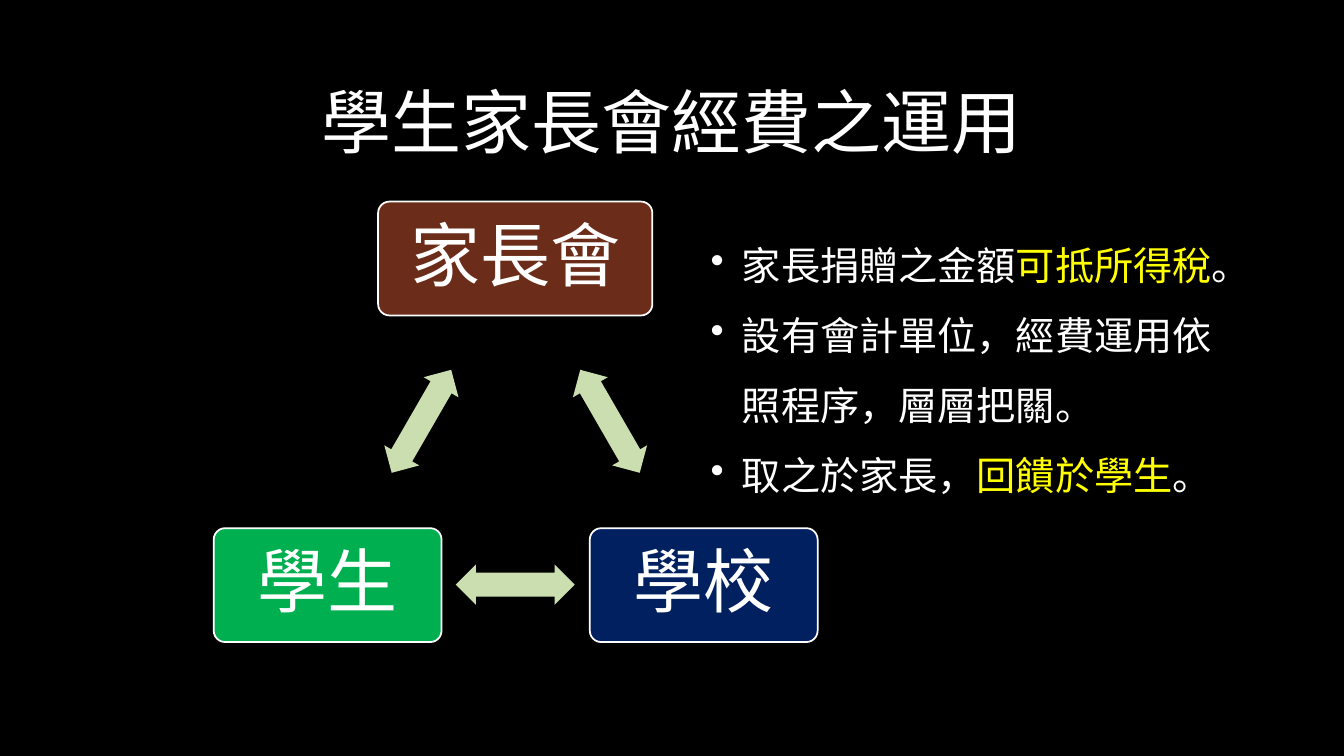
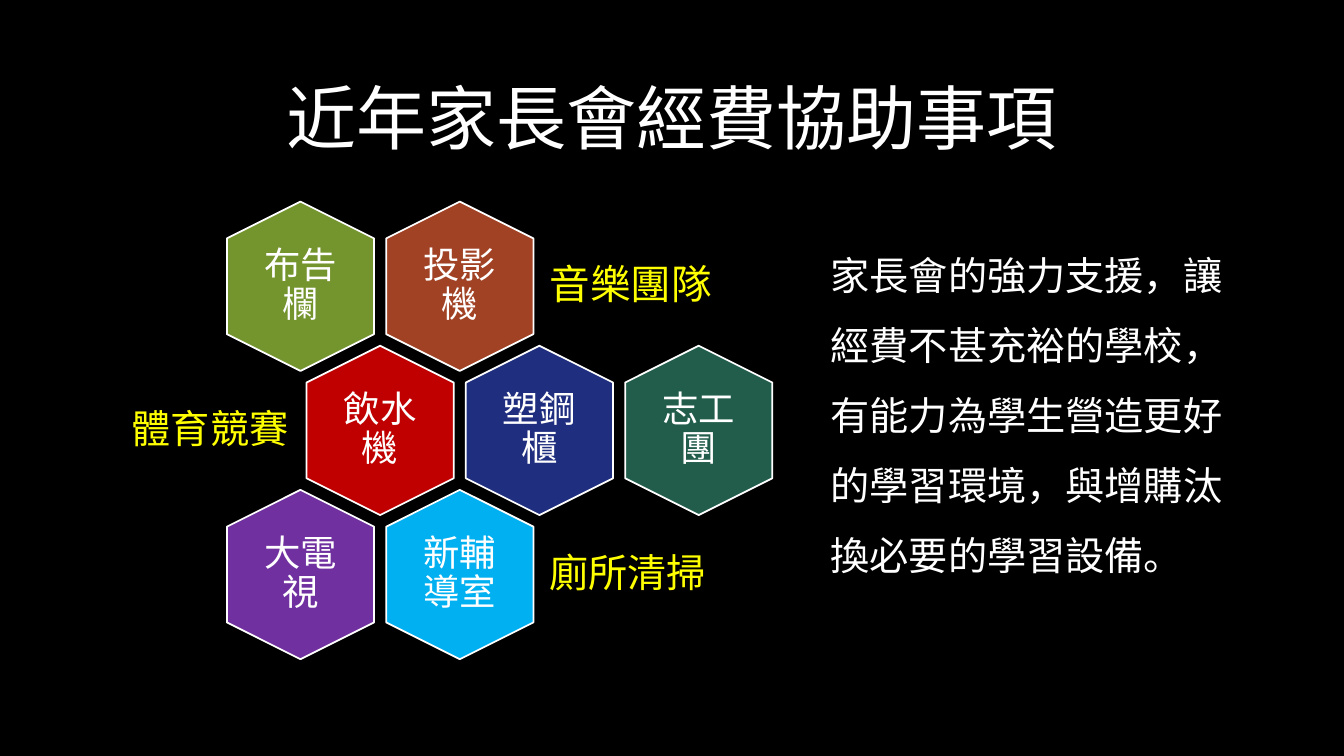
import lxml.etree
import pptx
import pptx.dml.color
import pptx.enum.shapes
import pptx.enum.text
import pptx.oxml.ns
import pptx.util

Inches = pptx.util.Inches
Pt = pptx.util.Pt
RGBColor = pptx.dml.color.RGBColor
MSO_SHAPE = pptx.enum.shapes.MSO_SHAPE
PP_ALIGN = pptx.enum.text.PP_ALIGN
MIDDLE = pptx.enum.text.MSO_ANCHOR.MIDDLE
qn = pptx.oxml.ns.qn

BLACK = RGBColor(0x00, 0x00, 0x00)
WHITE = RGBColor(0xFF, 0xFF, 0xFF)
YELLOW = RGBColor(0xFF, 0xFF, 0x00)
BROWN = RGBColor(0x6B, 0x2C, 0x19)
NAVY = RGBColor(0x00, 0x20, 0x60)
GREEN = RGBColor(0x00, 0xB0, 0x50)
PALE_GREEN = RGBColor(0xCA, 0xDE, 0xAF)
OLIVE = RGBColor(0x74, 0x94, 0x2D)
RUST = RGBColor(0xA1, 0x42, 0x25)
RED = RGBColor(0xC0, 0x00, 0x00)
BLUE = RGBColor(0x1F, 0x2E, 0x7E)
TEAL = RGBColor(0x22, 0x5D, 0x4C)
PURPLE = RGBColor(0x70, 0x30, 0xA0)
SKY = RGBColor(0x00, 0xB0, 0xF0)

FONT = "Noto Sans CJK SC"
PARTNER_FONT = "Noto Sans CJK JP"
BODY_SIZE = 28
BODY_SPACING = Pt(50)

prs = pptx.Presentation()
prs.slide_width = Inches(13.33)
prs.slide_height = Inches(7.5)
prs.slide_master.background.fill.solid()
prs.slide_master.background.fill.fore_color.rgb = BLACK


def add_run(paragraph, text, size, color=WHITE, font=FONT):
    run = paragraph.add_run()
    run.text = text
    run.font.size = Pt(size)
    run.font.color.rgb = color
    run.font.name = font
    east_asian = lxml.etree.SubElement(run.font._element, qn("a:ea"))
    east_asian.set("typeface", font)


def add_titled_slide(text, height):
    slide = prs.slides.add_slide(prs.slide_layouts[5])
    title = slide.shapes.title
    title.left, title.top = Inches(1), Inches(0.68)
    title.width, title.height = Inches(11.33), Inches(height)
    frame = title.text_frame
    frame.auto_size = pptx.enum.text.MSO_AUTO_SIZE.NONE
    frame.vertical_anchor = MIDDLE
    frame.paragraphs[0].alignment = PP_ALIGN.CENTER
    frame.paragraphs[0].line_spacing = 0.9
    add_run(frame.paragraphs[0], text, 50)
    return slide


# Slide 1: how the funds are used
funds = add_titled_slide("學生家長會經費之運用", 1.13)

# Three partners
for text, left, top, width, color in [
    ("家長會", 3.75, 2, 2.72, BROWN),
    ("學校", 5.85, 5.24, 2.26, NAVY),
    ("學生", 2.12, 5.24, 2.26, GREEN),
]:
    partner = funds.shapes.add_shape(
        MSO_SHAPE.ROUNDED_RECTANGLE,
        Inches(left), Inches(top), Inches(width), Inches(1.13))
    partner.adjustments[0] = 0.1
    partner.shadow.inherit = False
    partner.fill.solid()
    partner.fill.fore_color.rgb = color
    partner.line.color.rgb = WHITE
    partner.line.width = Pt(1.25)
    partner.text_frame.vertical_anchor = MIDDLE
    name = partner.text_frame.paragraphs[0]
    name.alignment = PP_ALIGN.CENTER
    name.line_spacing = 0.9
    add_run(name, text, 50, font=PARTNER_FONT)

# Two-way arrows between the partners
for left, top, angle in [(5.46, 3.98, 60), (4.52, 5.6, 180), (3.59, 3.98, 300)]:
    exchange = funds.shapes.add_shape(
        MSO_SHAPE.LEFT_RIGHT_ARROW,
        Inches(left), Inches(top), Inches(1.18), Inches(0.4))
    exchange.adjustments[0] = 0.6
    exchange.adjustments[1] = 0.5
    exchange.rotation = angle
    exchange.shadow.inherit = False
    exchange.fill.solid()
    exchange.fill.fore_color.rgb = PALE_GREEN
    exchange.line.fill.background()

# Principles
principles = funds.shapes.add_textbox(
    Inches(6.95), Inches(2.12), Inches(5.39), Inches(2.82)).text_frame
principles.word_wrap = True
for index, parts in enumerate([
    [("家長捐贈之金額", WHITE), ("可抵所得稅", YELLOW), ("。", WHITE)],
    [("設有會計單位，經費運用依照程序，層層把關。", WHITE)],
    [("取之於家長，", WHITE), ("回饋於學生", YELLOW), ("。", WHITE)],
]):
    principle = principles.add_paragraph() if index else principles.paragraphs[0]
    properties = principle._p.get_or_add_pPr()
    properties.set("marL", str(Inches(0.31)))
    properties.set("indent", str(-Inches(0.31)))
    lxml.etree.SubElement(properties, qn("a:buChar")).set("char", "•")
    principle.line_spacing = BODY_SPACING
    for text, color in parts:
        add_run(principle, text, BODY_SIZE, color)

# Slide 2: what the funds have supported
support = add_titled_slide("近年家長會經費協助事項", 1.06)

# Honeycomb: the middle row is shifted by half a column
FIRST_X, FIRST_Y = 2.98, 2.84
COLUMN_STEP, ROW_STEP = 1.58, 1.43
HEX_LENGTH, HEX_WIDTH = 1.68, 1.46
ITEM_WIDTH, ITEM_HEIGHT = 1.01, 1.16
for row, items in enumerate([
    [("布告欄", OLIVE), ("投影機", RUST)],
    [("飲水機", RED), ("塑鋼櫃", BLUE), ("志工團", TEAL)],
    [("大電視", PURPLE), ("新輔導室", SKY)],
]):
    for column, (text, color) in enumerate(items):
        x = FIRST_X + (column + row % 2 / 2) * COLUMN_STEP
        y = FIRST_Y + row * ROW_STEP
        cell = support.shapes.add_shape(
            MSO_SHAPE.HEXAGON,
            Inches(x - HEX_LENGTH / 2), Inches(y - HEX_WIDTH / 2),
            Inches(HEX_LENGTH), Inches(HEX_WIDTH))
        cell.adjustments[0] = 0.25
        cell.rotation = 90
        cell.shadow.inherit = False
        cell.fill.solid()
        cell.fill.fore_color.rgb = color
        cell.line.color.rgb = WHITE
        cell.line.width = Pt(1.25)

        # Upright text over the turned hexagon
        item = support.shapes.add_textbox(
            Inches(x - ITEM_WIDTH / 2), Inches(y - ITEM_HEIGHT / 2),
            Inches(ITEM_WIDTH), Inches(ITEM_HEIGHT)).text_frame
        item.word_wrap = True
        item.vertical_anchor = MIDDLE
        item.paragraphs[0].alignment = PP_ALIGN.CENTER
        item.paragraphs[0].line_spacing = 0.9
        add_run(item.paragraphs[0], text, 26)

# Activities beside each row
for row, (text, left, width, size, alignment) in enumerate([
    ("音樂團隊", 5.33, 1.88, 29, PP_ALIGN.LEFT),
    ("體育競賽", 1.15, 1.83, 28, PP_ALIGN.RIGHT),
    ("廁所清掃", 5.33, 1.88, 28, PP_ALIGN.LEFT),
]):
    activity = support.shapes.add_textbox(
        Inches(left), Inches(FIRST_Y + row * ROW_STEP - 0.5),
        Inches(width), Inches(1)).text_frame
    activity.margin_left = activity.margin_right = Inches(0.12)
    activity.word_wrap = True
    activity.vertical_anchor = MIDDLE
    activity.paragraphs[0].alignment = alignment
    activity.paragraphs[0].line_spacing = 0.9
    add_run(activity.paragraphs[0], text, size, YELLOW)

# Summary
summary = support.shapes.add_textbox(
    Inches(8.14), Inches(2.22), Inches(4.2), Inches(3.52)).text_frame
summary.word_wrap = True
summary.paragraphs[0].line_spacing = BODY_SPACING
add_run(
    summary.paragraphs[0],
    "家長會的強力支援，讓經費不甚充裕的學校，有能力為學生營造更好的學習環境，"
    "與增購汰換必要的學習設備。",
    BODY_SIZE)

prs.save("out.pptx")
